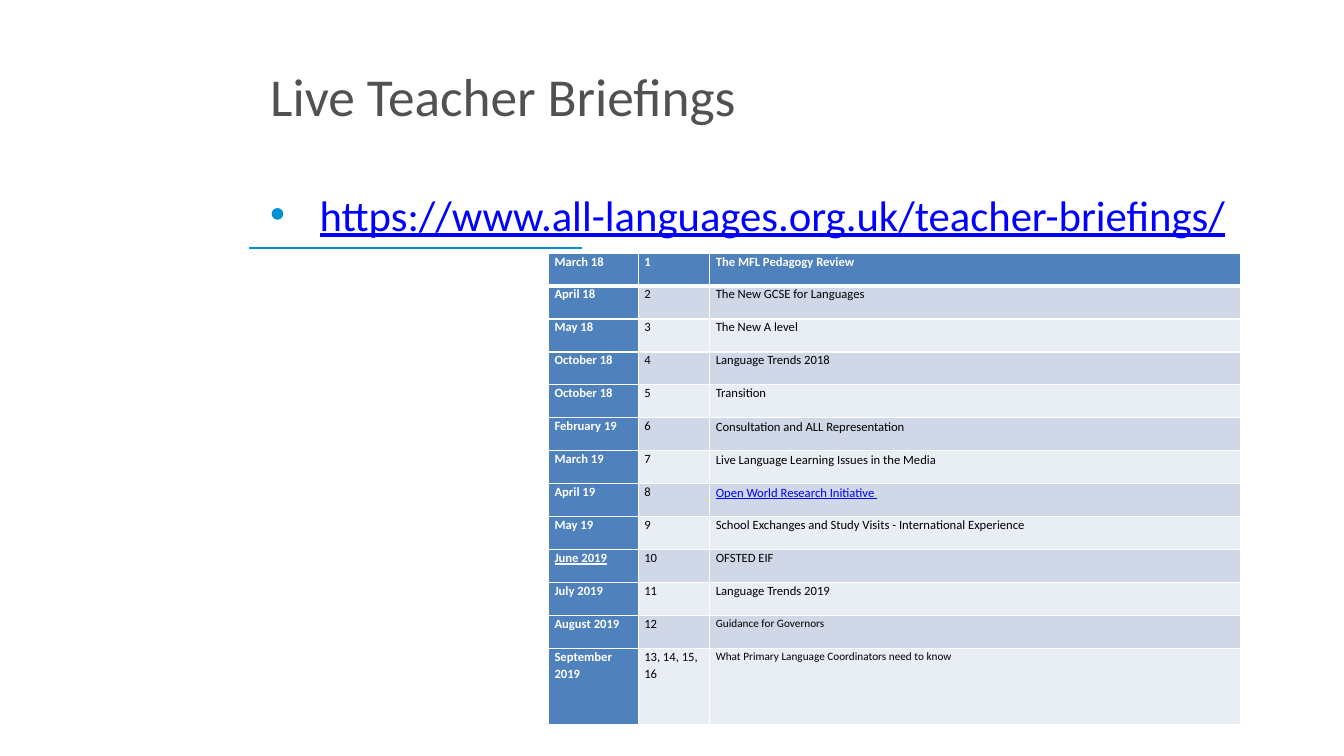
from dataclasses import dataclass

import pptx
import pptx.dml.color
import pptx.enum.shapes
import pptx.enum.text
import pptx.oxml
import pptx.oxml.ns
import pptx.util
from lxml import etree
from pptx.util import Inches


@dataclass(frozen=True)
class Theme:
    font: str = "Calibri"
    title_size: float = 38.1
    link_size: float = 30.5
    table_size: float = 9
    small_size: float = 8
    title: str = "505150"
    accent: str = "0092D2"
    link: str = "0000FF"
    header: str = "4F81BD"
    bands: tuple = ("E9EDF4", "D0D8E8")
    white: str = "FFFFFF"
    black: str = "000000"


THEME = Theme()

BRIEFINGS = [
    ("March 18", "1", "The MFL Pedagogy Review"),
    ("April 18", "2", "The New GCSE for Languages"),
    ("May 18", "3", "The New A level"),
    ("October 18", "4", "Language Trends 2018"),
    ("October 18", "5", "Transition"),
    ("February 19", "6", "Consultation and ALL Representation"),
    ("March 19", "7", "Live Language Learning Issues in the Media"),
    ("April 19", "8", "Open World Research Initiative "),
    ("May 19", "9", "School Exchanges and Study Visits - International Experience"),
    ("June 2019", "10", "OFSTED EIF"),
    ("July 2019", "11", "Language Trends 2019"),
    ("August 2019", "12", "Guidance for Governors"),
    ("September 2019", "13, 14, 15, 16", "What Primary Language Coordinators need to know"),
]
LINKED_TOPIC = BRIEFINGS[7][2]
UNDERLINED = {LINKED_TOPIC, "June 2019"}
SMALL_TOPICS = {topic for _, _, topic in BRIEFINGS[-2:]}
FIXED_LEADING_TOPICS = {BRIEFINGS[row][2] for row in (0, 5, 6, 7)}

COLUMN_WIDTHS = (0.89, 0.71, 5.26)
TABLE_HEIGHT = 4.68
LAST_ROW_HEIGHT = 0.75


def rgb(value):
    return pptx.dml.color.RGBColor.from_string(value)


def style(paragraph, size, color, bold=False, underline=False):
    font = paragraph.font
    font.name, font.size = THEME.font, pptx.util.Pt(size)
    font.bold, font.underline = bold, underline
    font.color.rgb = rgb(color)


def add_text(slide, box, text, bottom_inset=0):
    frame = slide.shapes.add_textbox(*map(Inches, box)).text_frame
    frame.word_wrap = True
    frame.margin_left = frame.margin_right = 0
    frame.margin_top, frame.margin_bottom = Inches(0.07), Inches(bottom_inset)
    frame.paragraphs[0].text = text
    return frame


def add_bullet(paragraph, color, indent):
    properties = paragraph._p.get_or_add_pPr()
    properties.set("marL", str(Inches(indent)))
    properties.set("indent", str(-Inches(indent)))
    bullet_color = etree.SubElement(properties, pptx.oxml.ns.qn("a:buClr"))
    etree.SubElement(bullet_color, pptx.oxml.ns.qn("a:srgbClr"), val=color)
    etree.SubElement(properties, pptx.oxml.ns.qn("a:buFont"), typeface="Arial")
    etree.SubElement(properties, pptx.oxml.ns.qn("a:buChar"), char="•")


def add_rule(slide, left, right, y):
    rule = slide.shapes.add_connector(
        pptx.enum.shapes.MSO_CONNECTOR.STRAIGHT,
        Inches(left), Inches(y), Inches(right), Inches(y))
    rule.line.color.rgb = rgb(THEME.accent)
    rule.line.width = pptx.util.Pt(2)
    etree.SubElement(rule._element.spPr, pptx.oxml.ns.qn("a:effectLst"))


def set_borders(cell, widths):
    properties = cell._tc.get_or_add_tcPr()
    for position, (side, width) in enumerate(widths.items()):
        border = etree.Element(pptx.oxml.ns.qn(f"a:ln{side}"), w=str(pptx.util.Pt(width)))
        fill = etree.SubElement(border, pptx.oxml.ns.qn("a:solidFill"))
        etree.SubElement(fill, pptx.oxml.ns.qn("a:srgbClr"), val=THEME.white)
        properties.insert(position, border)


def fill_cell(cell, text, row, column):
    is_header = row == 0 or column == 0
    cell.margin_left = cell.margin_right = Inches(0.06)
    cell.margin_top = cell.margin_bottom = 0
    cell.fill.solid()
    cell.fill.fore_color.rgb = rgb(THEME.header if is_header else THEME.bands[row % 2])
    set_borders(cell, {"L": 1, "R": 1, "T": 3 if row == 1 else 1, "B": 3 if row == 0 else 1})

    paragraph = cell.text_frame.paragraphs[0]
    paragraph.text = text
    paragraph.line_spacing = pptx.util.Pt(12) if text in FIXED_LEADING_TOPICS else 1.07
    color = THEME.white if is_header else THEME.black
    if text == LINKED_TOPIC:
        color = THEME.link
    size = THEME.small_size if text in SMALL_TOPICS else THEME.table_size
    style(paragraph, size, color, is_header, text in UNDERLINED)


def add_briefing_table(slide, left, top):
    table = slide.shapes.add_table(
        len(BRIEFINGS), len(COLUMN_WIDTHS), Inches(left), Inches(top),
        Inches(sum(COLUMN_WIDTHS)), Inches(TABLE_HEIGHT)).table
    for column, width in zip(table.columns, COLUMN_WIDTHS):
        column.width = Inches(width)
    row_height = (TABLE_HEIGHT - LAST_ROW_HEIGHT) / (len(BRIEFINGS) - 1)
    for row, briefing in enumerate(BRIEFINGS):
        is_last = row == len(BRIEFINGS) - 1
        table.rows[row].height = Inches(LAST_ROW_HEIGHT if is_last else row_height)
        for column, text in enumerate(briefing):
            fill_cell(table.cell(row, column), text, row, column)


def main():
    deck = pptx.Presentation()
    deck.slide_width, deck.slide_height = Inches(13.33), Inches(7.5)
    slide = deck.slides.add_slide(deck.slide_layouts[6])

    # Accent rule
    add_rule(slide, 2.47, 5.77, 2.46)

    # Title, raised above the middle of its box
    title = add_text(slide, (2.68, 0.28, 6.91, 1.89), "Live Teacher Briefings", 0.64)
    title.vertical_anchor = pptx.enum.text.MSO_ANCHOR.MIDDLE
    style(title.paragraphs[0], THEME.title_size, THEME.title)

    # Web address
    address = add_text(slide, (2.68, 1.8, 9.84, 4.87),
                       "https://www.all-languages.org.uk/teacher-briefings/").paragraphs[0]
    add_bullet(address, THEME.accent, 0.49)
    style(address, THEME.link_size, THEME.link, underline=True)

    # Schedule of briefings
    add_briefing_table(slide, 5.44, 2.51)

    deck.save("out.pptx")


if __name__ == "__main__":
    main()
